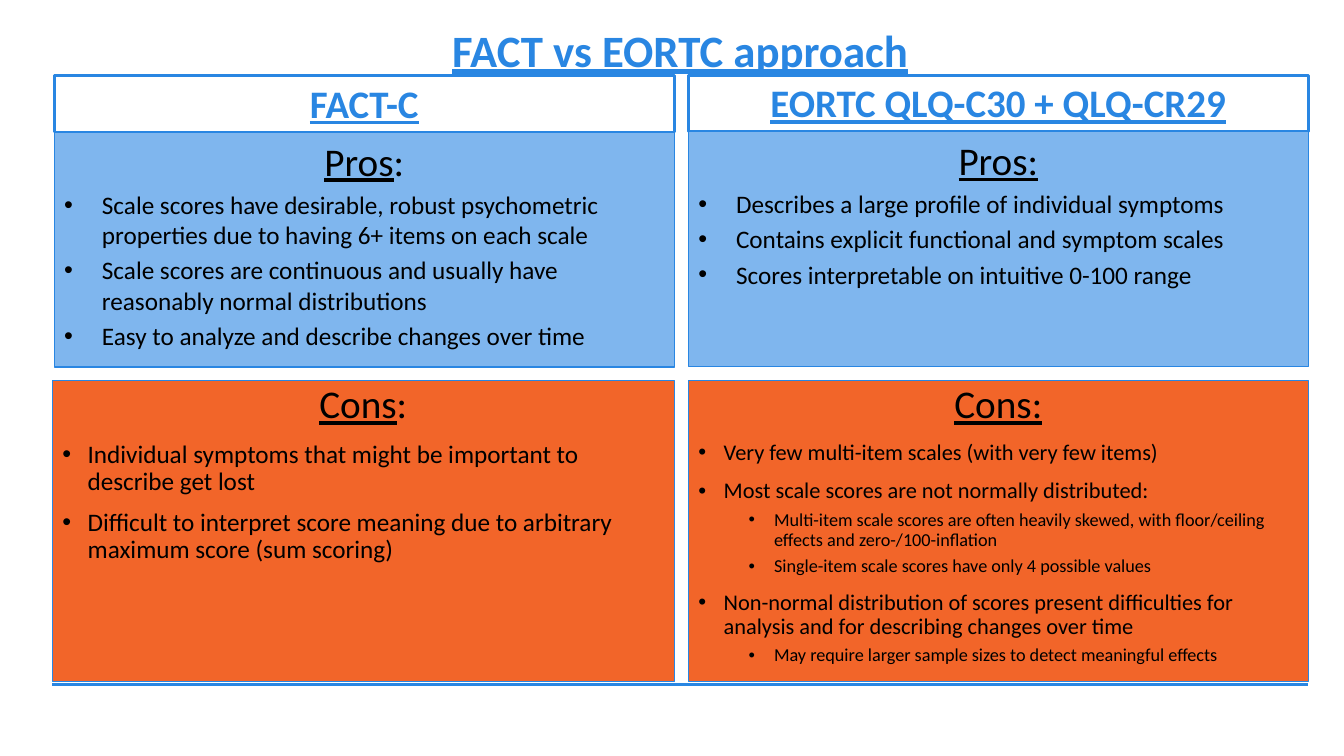
from lxml.etree import SubElement
from pptx import Presentation
from pptx.dml.color import RGBColor
from pptx.enum.shapes import MSO_CONNECTOR, MSO_SHAPE
from pptx.enum.text import MSO_ANCHOR, PP_ALIGN
from pptx.oxml.ns import qn
from pptx.util import Cm, Pt

BLUE, LIGHT_BLUE, ORANGE, BLACK = "2986E2", "7FB6EE", "F26529", "000000"


def color(hex_string):
    return RGBColor.from_string(hex_string)


class ComparisonSlide:
    font = "Calibri"

    def __init__(self, deck):
        self.slide = deck.slides.add_slide(deck.slide_layouts[6])

    def rule(self, x1, x2, y, width):
        line = self.slide.shapes.add_connector(
            MSO_CONNECTOR.STRAIGHT, Cm(x1), Cm(y), Cm(x2), Cm(y))
        line.line.color.rgb = color(BLUE)
        line.line.width = Pt(width)
        SubElement(line._element.spPr, qn("a:effectLst"))

    def box(self, left, top, width, height, line_width, fill=None,
            anchor=MSO_ANCHOR.TOP):
        shape = self.slide.shapes.add_shape(
            MSO_SHAPE.RECTANGLE, Cm(left), Cm(top), Cm(width), Cm(height))
        shape.shadow.inherit = False
        if fill:
            shape.fill.solid()
            shape.fill.fore_color.rgb = color(fill)
        else:
            shape.fill.background()
        shape.line.color.rgb = color(BLUE)
        shape.line.width = Pt(line_width)
        return self.frame(shape, anchor)

    def text_box(self, left, top, width, height, anchor):
        shape = self.slide.shapes.add_textbox(
            Cm(left), Cm(top), Cm(width), Cm(height))
        return self.frame(shape, anchor)

    def frame(self, shape, anchor):
        frame = shape.text_frame
        frame.word_wrap = True
        frame.vertical_anchor = anchor
        return frame

    def run(self, paragraph, text, size, ink=BLACK, bold=False, underline=False):
        run = paragraph.add_run()
        run.text = text
        run.font.name = self.font
        run.font.size = Pt(size)
        run.font.bold = bold
        run.font.underline = underline
        run.font.color.rgb = color(ink)

    def heading(self, frame, parts, size, spacing=1.0, ink=BLACK, bold=False):
        """Fill the first paragraph; parts are (text, underlined) pairs."""
        paragraph = frame.paragraphs[0]
        paragraph.alignment = PP_ALIGN.CENTER
        paragraph.line_spacing = spacing
        for text, underline in parts:
            self.run(paragraph, text, size, ink, bold, underline)

    def bullet(self, frame, text, size, indent, hanging, spacing, before, level=0):
        paragraph = frame.add_paragraph()
        paragraph.level = level
        paragraph.alignment = PP_ALIGN.LEFT
        paragraph.line_spacing = spacing
        paragraph.space_before = Pt(before)
        properties = paragraph._p.get_or_add_pPr()
        properties.set("marL", str(Cm(indent)))
        properties.set("indent", str(-Cm(hanging)))
        SubElement(properties, qn("a:buFont")).set("typeface", "Arial")
        SubElement(properties, qn("a:buChar")).set("char", "•")
        self.run(paragraph, text, size)

    def pros(self, left, top, parts, points):
        frame = self.box(left, top, COLUMN_WIDTH, 5.92, 0.75, LIGHT_BLUE)
        self.heading(frame, parts, 28)
        for text in points:
            self.bullet(frame, text, 18, 0.95, 0.95, 1.0, 3.6)

    def cons(self, left, width, parts, sizes, points):
        """Points are (level, text) pairs; sizes holds one size per level."""
        frame = self.box(left, 9.58, width, 7.59, 0.75, ORANGE)
        self.heading(frame, parts, 28, 0.9)
        for level, text in points:
            self.bullet(frame, text, sizes[level], 0.64 + 1.27 * level, 0.64,
                        0.9, 10 - 5 * level, level)


COLUMN_WIDTH = 15.62
HEADER_TOP = 1.91
RULE_LEFT, RIGHT_EDGE = 1.32, 32.97

# Each column: left, header height, header, cons left, headings, points
COLUMNS = [
    dict(left=1.37, header_height=1.42, header="FACT-C", cons_left=RULE_LEFT,
         pros_heading=[("Pros", True), (":", False)],
         cons_heading=[("Cons", True), (":", False)],
         pros=["Scale scores have desirable, robust psychometric properties "
               "due to having 6+ items on each scale",
               "Scale scores are continuous and usually have reasonably "
               "normal distributions",
               "Easy to analyze and describe changes over time"],
         sizes=[18],
         cons=[(0, "Individual symptoms that might be important to describe "
                   "get lost"),
               (0, "Difficult to interpret score meaning due to arbitrary "
                   "maximum score (sum scoring)")]),
    dict(left=17.35, header_height=1.4, header="EORTC QLQ-C30 + QLQ-CR29",
         cons_left=17.35,
         pros_heading=[("Pros:", True)], cons_heading=[("Cons:", True)],
         pros=["Describes a large profile of individual symptoms",
               "Contains explicit functional and symptom scales",
               "Scores interpretable on intuitive 0-100 range"],
         sizes=[16, 13],
         cons=[(0, "Very few multi-item scales (with very few items)"),
               (0, "Most scale scores are not normally distributed:"),
               (1, "Multi-item scale scores are often heavily skewed, with "
                   "floor/ceiling effects and zero-/100-inflation"),
               (1, "Single-item scale scores have only 4 possible values"),
               (0, "Non-normal distribution of scores present difficulties "
                   "for analysis and for describing changes over time"),
               (1, "May require larger sample sizes to detect meaningful "
                   "effects")]),
]


def main():
    deck = Presentation()
    deck.slide_width, deck.slide_height = Cm(33.87), Cm(19.05)
    page = ComparisonSlide(deck)

    # Bottom rule
    page.rule(RULE_LEFT, RIGHT_EDGE, 17.25, 2.25)

    # Header and pros of each instrument
    for column in COLUMNS:
        left, height = column["left"], column["header_height"]
        header = page.box(left, HEADER_TOP, COLUMN_WIDTH, height, 2,
                          anchor=MSO_ANCHOR.BOTTOM)
        page.heading(header, [(column["header"], True)], 27.8, 0.9, BLUE, True)
        page.pros(left, HEADER_TOP + height, column["pros_heading"],
                  column["pros"])

    # Title
    title = page.text_box(RULE_LEFT, 0.25, RIGHT_EDGE - RULE_LEFT, 1.98,
                          MSO_ANCHOR.MIDDLE)
    page.heading(title, [("FACT vs EORTC approach", True)], 32, 1.0, BLUE, True)

    # Cons of each instrument
    for column in COLUMNS:
        width = column["left"] + COLUMN_WIDTH - column["cons_left"]
        page.cons(column["cons_left"], width, column["cons_heading"],
                  column["sizes"], column["cons"])

    deck.save("out.pptx")


if __name__ == "__main__":
    main()
